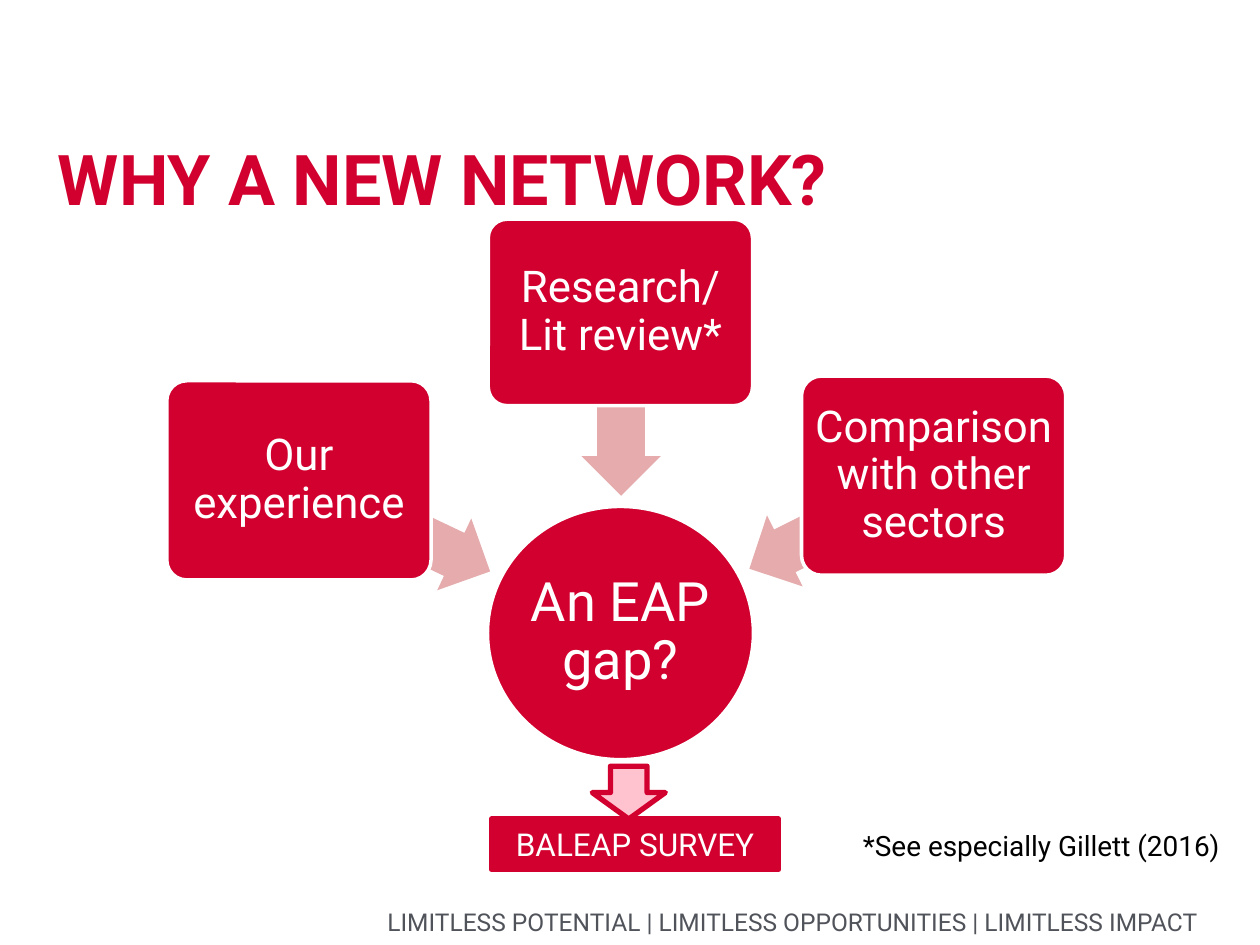
from dataclasses import dataclass

from pptx import Presentation
from pptx.dml.color import RGBColor
from pptx.enum.shapes import MSO_SHAPE
from pptx.enum.text import MSO_ANCHOR, PP_ALIGN
from pptx.util import Pt

FONT = "Roboto"
RED = RGBColor(0xD2, 0x00, 0x2E)
ROSE = RGBColor(0xE5, 0xAB, 0xAD)
PINK = RGBColor(0xFF, 0xC3, 0xD0)
WHITE = RGBColor(0xFF, 0xFF, 0xFF)
BLACK = RGBColor(0, 0, 0)
GREY = RGBColor(0x50, 0x53, 0x5A)


@dataclass
class Box:
    left: float
    top: float
    width: float
    height: float

    def lengths(self):
        return Pt(self.left), Pt(self.top), Pt(self.width), Pt(self.height)


@dataclass
class Reason:
    text: str
    box: Box
    arrow: Box
    rotation: float


REASONS = [
    Reason("Our experience", Box(95.3, 217.6, 151, 113.8),
           Box(164.9, 277.9, 121, 45.4), 205.4),
    Reason("Research/ Lit review*", Box(279, 125.3, 151, 106.5),
           Box(302.4, 208.1, 105, 45.4), 270),
    Reason("Comparison with other sectors", Box(458, 214.9, 151, 113.8),
           Box(421.9, 275.8, 118, 45.4), 333.3),
]


def set_text(sp, text: str, *, size: float, color: RGBColor, align=PP_ALIGN.LEFT,
             anchor=MSO_ANCHOR.TOP, inset=(0, 0), spacing=None,
             bold: bool = False, wrap: bool = True) -> None:
    tf = sp.text_frame
    tf.word_wrap = wrap
    tf.vertical_anchor = anchor
    tf.margin_left = tf.margin_right = Pt(inset[0])
    tf.margin_top = tf.margin_bottom = Pt(inset[1])
    p = tf.paragraphs[0]
    p.alignment = align
    if spacing:
        p.line_spacing = spacing
    r = p.add_run()
    r.text = text
    r.font.name = FONT
    r.font.size = Pt(size)
    r.font.bold = bold
    r.font.color.rgb = color


def add_block(s, kind, box: Box, fill: RGBColor, line=None, width: float = 0,
              adjustments=(), rotation: float = 0):
    sp = s.shapes.add_shape(kind, *box.lengths())
    sp.shadow.inherit = False
    sp.rotation = rotation
    for i, value in enumerate(adjustments):
        sp.adjustments[i] = value
    sp.fill.solid()
    sp.fill.fore_color.rgb = fill
    if line is None:
        sp.line.fill.background()
    else:
        sp.line.color.rgb = line
        sp.line.width = Pt(width)
    return sp


def add_reason(s, reason: Reason) -> None:
    add_block(s, MSO_SHAPE.LEFT_ARROW, reason.arrow, ROSE,
              adjustments=(0.6, 0.5), rotation=reason.rotation)
    sp = add_block(s, MSO_SHAPE.ROUNDED_RECTANGLE, reason.box, RED, WHITE, 2,
                   adjustments=(0.1,))
    set_text(sp, reason.text, size=25, color=WHITE, align=PP_ALIGN.CENTER,
             anchor=MSO_ANCHOR.MIDDLE, inset=(3.6, 3.6), spacing=0.9)


def add_label(s, box: Box, text: str, **fmt) -> None:
    set_text(s.shapes.add_textbox(*box.lengths()), text, **fmt)


def main() -> None:
    prs = Presentation()
    prs.slide_width, prs.slide_height = Pt(720), Pt(540)
    s = prs.slides.add_slide(prs.slide_layouts[5])

    add_label(s, Box(152, 517.7, 532.8, 17.3),
              "LIMITLESS POTENTIAL | LIMITLESS OPPORTUNITIES | LIMITLESS IMPACT",
              size=14, color=GREY, align=PP_ALIGN.RIGHT, anchor=MSO_ANCHOR.BOTTOM)

    title = s.shapes.title
    title.left, title.top, title.width, title.height = Box(33.1, 59.8, 652.3, 65.5).lengths()
    set_text(title, "WHY A NEW NETWORK?", size=40, color=RED, bold=True,
             anchor=MSO_ANCHOR.BOTTOM, wrap=False)

    gap = add_block(s, MSO_SHAPE.OVAL, Box(278.6, 289.4, 152, 144.7), RED, WHITE, 2)
    set_text(gap, "An EAP gap?", size=31, color=WHITE, align=PP_ALIGN.CENTER,
             anchor=MSO_ANCHOR.MIDDLE, inset=(1.5, 1.5), spacing=0.9)

    for reason in REASONS:
        add_reason(s, reason)

    survey = add_block(s, MSO_SHAPE.RECTANGLE, Box(280.8, 468, 164.2, 28.8), RED, RED, 3)
    set_text(survey, "BALEAP SURVEY", size=18, color=WHITE, align=PP_ALIGN.CENTER,
             anchor=MSO_ANCHOR.MIDDLE, inset=(7.2, 3.6), wrap=False)
    add_block(s, MSO_SHAPE.DOWN_ARROW, Box(338.4, 437.8, 41.8, 30.2), PINK, RED, 3)

    add_label(s, Box(486, 470.2, 221.8, 26.6), "*See especially Gillett (2016)",
              size=16, color=BLACK, inset=(7.2, 3.6))

    prs.save("out.pptx")


if __name__ == "__main__":
    main()
